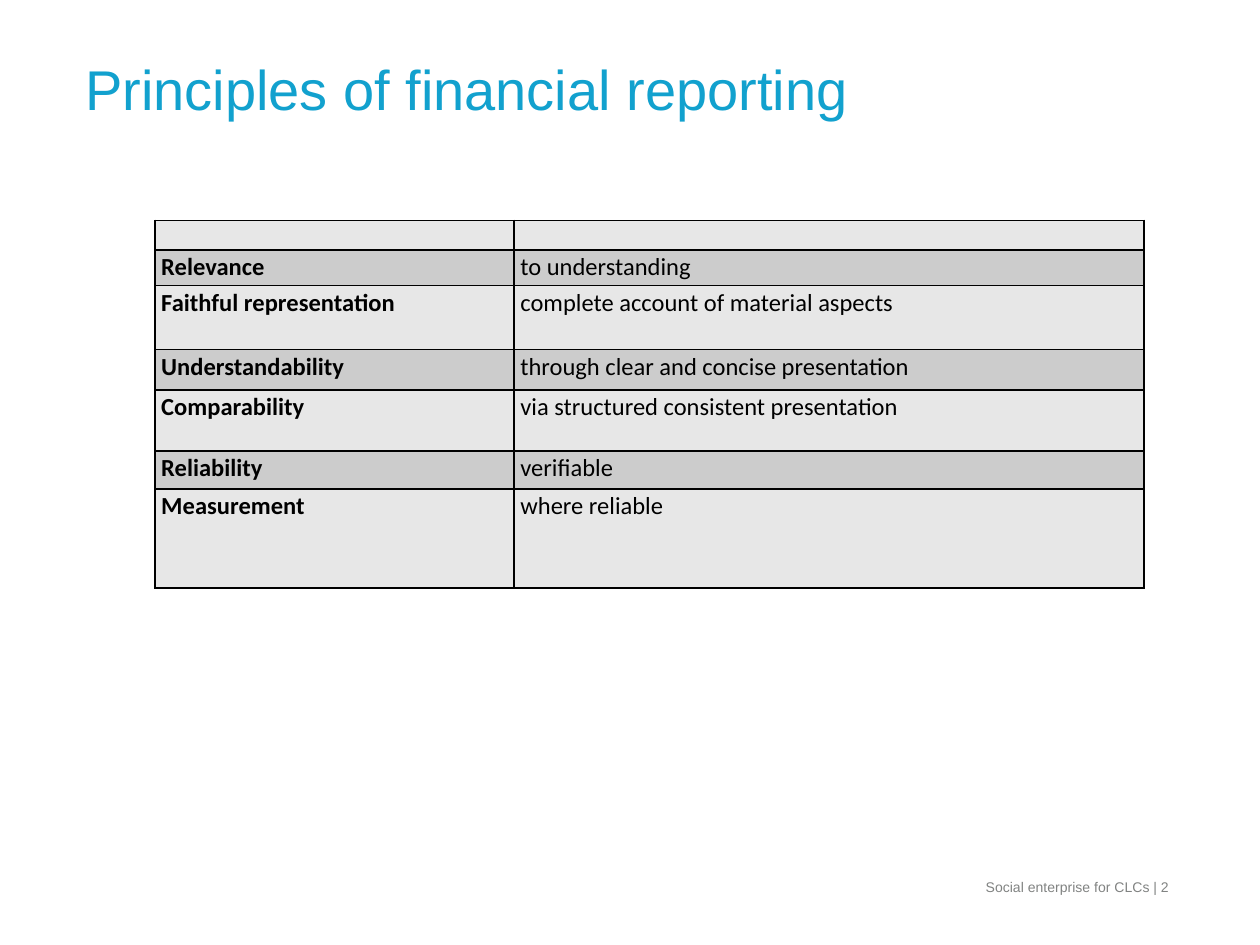
from pptx import Presentation
from pptx.dml.color import RGBColor
from pptx.enum.text import PP_ALIGN
from pptx.oxml import parse_xml
from pptx.oxml.ns import nsdecls
from pptx.util import Cm, Pt

LEFT, RIGHT = PP_ALIGN.LEFT, PP_ALIGN.RIGHT
COLORS = {
    "title": "12A1CE",
    "footer": "818382",
    "text": "000000",
    "border": "000000",
    "light": "E7E7E7",
    "dark": "CCCCCC",
}
TITLE = "Principles of financial reporting"
FOOTER = "Social enterprise for CLCs | 2"
PRINCIPLES = [
    ("", "", 0.6),
    ("Relevance", "to understanding", 0.72),
    ("Faithful representation", "complete account of material aspects", 1.29),
    ("Understandability", "through clear and concise presentation", 0.81),
    ("Comparability", "via structured consistent presentation", 1.23),
    ("Reliability", "verifiable", 0.77),
    ("Measurement", "where reliable", 1.99),
]
COLUMN_WIDTHS = (7.24, 12.7)


def style_text(para, font_name, size, color, bold=False):
    for span in para.runs:
        span.font.name = font_name
        span.font.size = Pt(size)
        span.font.bold = bold
        span.font.color.rgb = RGBColor.from_string(COLORS[color])


def add_label(page, text, left, top, width, height, size, color, align, margin_top):
    box = page.shapes.add_textbox(Cm(left), Cm(top), Cm(width), Cm(height))
    frame = box.text_frame
    frame.word_wrap = True
    frame.margin_top = Cm(margin_top)
    frame.text = text
    para = frame.paragraphs[0]
    para.alignment = align
    style_text(para, "Arial", size, color)


def add_borders(cell):
    properties = cell._tc.get_or_add_tcPr()
    for position, side in enumerate(("lnL", "lnR", "lnT", "lnB")):
        line = parse_xml(
            f'<a:{side} {nsdecls("a")} w="{Pt(1)}"><a:solidFill>'
            f'<a:srgbClr val="{COLORS["border"]}"/></a:solidFill></a:{side}>'
        )
        properties.insert(position, line)


def fill_cell(cell, text, fill, bold):
    cell.fill.solid()
    cell.fill.fore_color.rgb = RGBColor.from_string(COLORS[fill])
    cell.margin_left = cell.margin_right = Cm(0.13)
    cell.margin_top = cell.margin_bottom = 0
    para = cell.text_frame.paragraphs[0]
    if text:
        para.text = text
        para.line_spacing = 1.07
        style_text(para, "Calibri", 14, "text", bold)
    else:
        para._p.append(parse_xml(f'<a:endParaRPr {nsdecls("a")} sz="1000"/>'))
    add_borders(cell)


def add_principles(page):
    heights = [height for _, _, height in PRINCIPLES]
    table = page.shapes.add_table(
        len(PRINCIPLES), len(COLUMN_WIDTHS), Cm(3.12), Cm(4.44),
        Cm(sum(COLUMN_WIDTHS)), Cm(sum(heights)),
    ).table
    for column, width in zip(table.columns, COLUMN_WIDTHS):
        column.width = Cm(width)
    for index, (name, meaning, height) in enumerate(PRINCIPLES):
        table.rows[index].height = Cm(height)
        fill = "dark" if index % 2 else "light"
        fill_cell(table.cell(index, 0), name, fill, True)
        fill_cell(table.cell(index, 1), meaning, fill, False)


def main():
    deck = Presentation()
    deck.slide_width, deck.slide_height = Cm(25.4), Cm(19.05)
    page = deck.slides.add_slide(deck.slide_layouts[6])
    add_label(page, FOOTER, 13.46, 17.58, 10.36, 0.64, 8, "footer", RIGHT, 0.13)
    add_principles(page)
    add_label(page, TITLE, 1.47, 0.84, 21.59, 3.18, 32, "title", LEFT, 0.25)
    deck.save("out.pptx")


if __name__ == "__main__":
    main()
